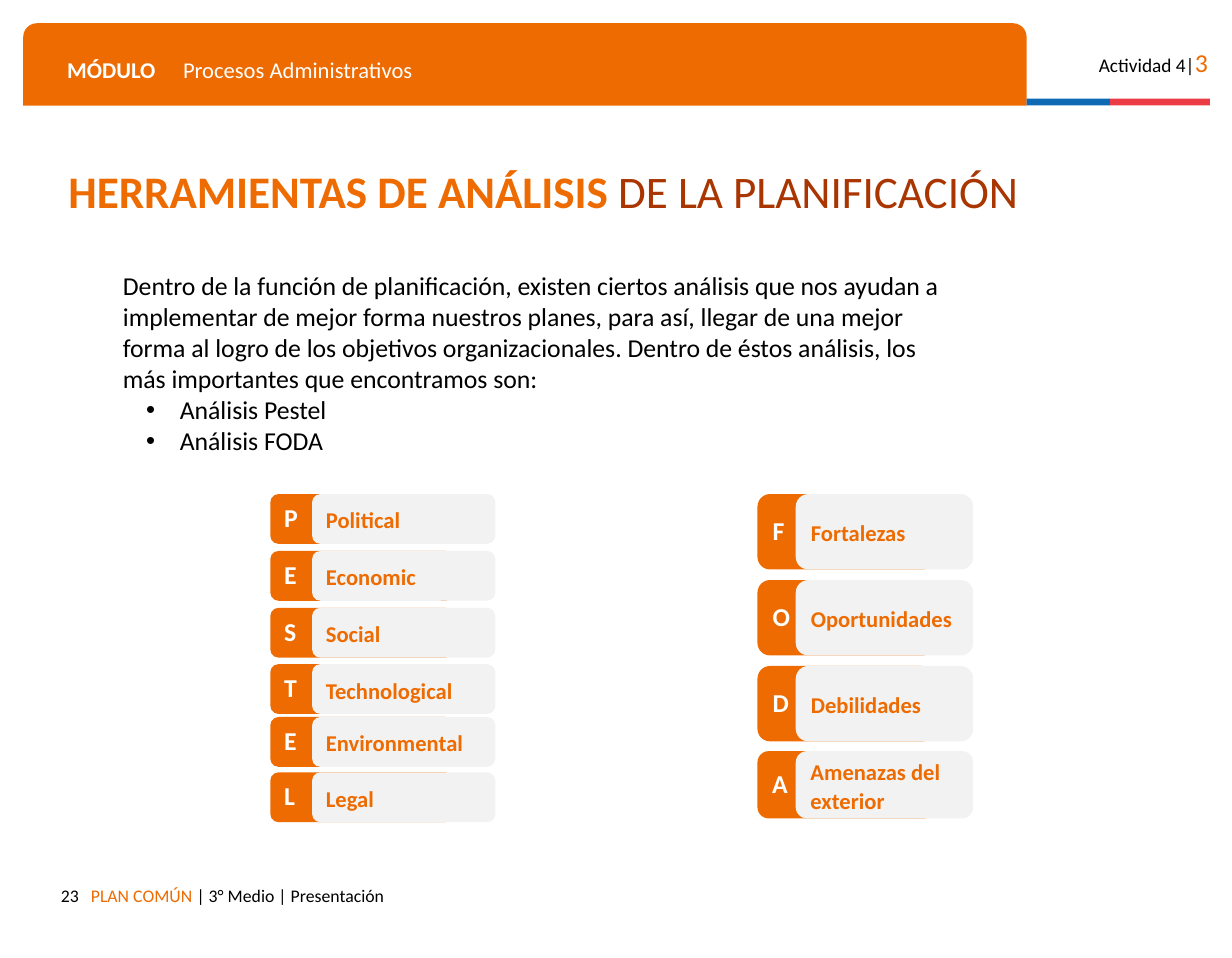
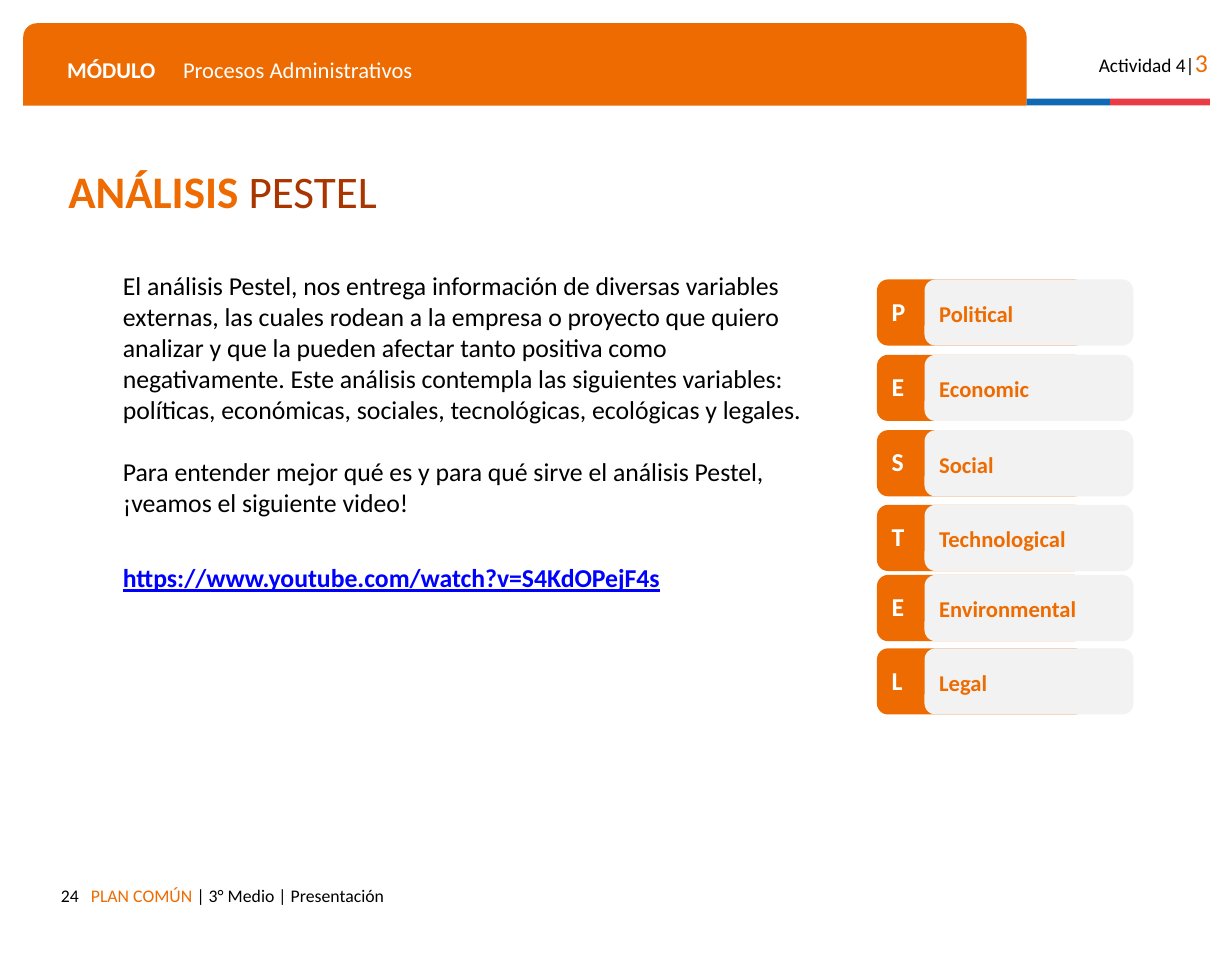
"""Two slides on planning analysis tools: PESTEL and FODA."""
from dataclasses import dataclass
from typing import Optional

from lxml import etree
from pptx import Presentation, util as u
from pptx.dml.color import RGBColor
from pptx.enum import shapes as sh, text as tx
from pptx.oxml import ns

ORANGE = RGBColor(0xED, 0x6B, 0x00)
RUST = RGBColor(0xA9, 0x35, 0x01)
BLUE = RGBColor(0x0F, 0x69, 0xB4)
RED = RGBColor(0xEB, 0x3C, 0x46)
GREY = RGBColor(0xF2, 0xF2, 0xF2)
WHITE = RGBColor(0xFF, 0xFF, 0xFF)
BLACK = RGBColor(0x00, 0x00, 0x00)
LINK = RGBColor(0x00, 0x00, 0xFF)
FONT = "Calibri"
CELL = u.Inches(0.1)
COLS, ROWS = 106.2, 82.6
ROUND = 0.167
STEPS = (0, 1.14, 2.28, 3.41, 4.47, 5.58)
PESTEL = ("Political", "Economic", "Social", "Technological", "Environmental", "Legal")
FODA = ("Fortalezas", "Oportunidades", "Debilidades", "Amenazas del exterior")


@dataclass(frozen=True)
class Box:
    x: float
    y: float
    w: float
    h: float

    def cells(self) -> list[int]:
        return [cell(n) for n in (self.x, self.y, self.w, self.h)]


@dataclass(frozen=True)
class Run:
    words: str
    size: float
    color: RGBColor = BLACK
    bold: bool = False
    line: bool = False


@dataclass(frozen=True)
class Para:
    runs: tuple[Run, ...]
    space: float = 1.0
    before: float = 0
    bullet: bool = False
    tab: Optional[float] = None


@dataclass(frozen=True)
class Stack:
    words: tuple[str, ...]
    box: Box
    shift: float
    last: float


@dataclass(frozen=True)
class Page:
    number: str
    title: tuple[str, str]
    body: Box
    paras: tuple[Para, ...]
    stacks: tuple[Stack, ...]


def cell(count: float) -> int:
    return round(count * CELL)


def write(frame, paras: tuple[Para, ...], *, align=tx.PP_ALIGN.LEFT,
          anchor=tx.MSO_ANCHOR.TOP, inset: float = 1, pad: Optional[float] = None) -> None:
    frame.word_wrap = True
    frame.auto_size = tx.MSO_AUTO_SIZE.NONE
    frame.vertical_anchor = anchor
    frame.margin_left = frame.margin_right = cell(inset)
    frame.margin_top = frame.margin_bottom = cell(inset if pad is None else pad)
    for i, para in enumerate(paras):
        p = frame.paragraphs[0] if i == 0 else frame.add_paragraph()
        prop = p._p.get_or_add_pPr()
        prop.set("marL", str(cell(4.9 if para.bullet else 0)))
        prop.set("indent", str(cell(-2.9 if para.bullet else 0)))
        if para.bullet:
            etree.SubElement(prop, ns.qn("a:buChar")).set("char", "•")
        else:
            etree.SubElement(prop, ns.qn("a:buNone"))
        if para.tab is not None:
            tabs = etree.SubElement(prop, ns.qn("a:tabLst"))
            stop = etree.SubElement(tabs, ns.qn("a:tab"))
            stop.set("pos", str(cell(para.tab)))
            stop.set("algn", "l")
        p.alignment = align
        p.line_spacing = para.space
        p.space_before = u.Pt(para.before)
        for run in para.runs:
            r = p.add_run()
            r.text = run.words
            r.font.name = FONT
            r.font.size = u.Pt(run.size)
            r.font.bold = run.bold
            r.font.underline = run.line
            r.font.color.rgb = run.color


def label(slide, box: Box, *runs: Run, tab: Optional[float] = None, **style) -> None:
    area = slide.shapes.add_textbox(*box.cells())
    write(area.text_frame, (Para(runs, tab=tab),), **style)


def block(slide, kind, box: Box, color: RGBColor):
    item = slide.shapes.add_shape(kind, *box.cells())
    item.shadow.inherit = False
    item.fill.solid()
    item.fill.fore_color.rgb = color
    item.line.fill.background()
    return item


def tile(slide, box: Box, color: RGBColor, run: Run, space: float) -> None:
    item = block(slide, sh.MSO_SHAPE.ROUNDED_RECTANGLE, box, color)
    item.adjustments[0] = ROUND
    write(item.text_frame, (Para((run,), space),),
          anchor=tx.MSO_ANCHOR.MIDDLE, pad=0)


def stack(slide, data: Stack) -> None:
    base = data.box
    end = len(data.words) - 1
    for i, (word, step) in enumerate(zip(data.words, STEPS)):
        top = base.y + step * base.h
        high = data.last if i == end else base.h
        tile(slide, Box(base.x, top, base.w, high), ORANGE,
             Run(word[0], 16, WHITE, True), 0.94)
        tile(slide, Box(base.x + data.shift, top, base.w, high), GREY,
             Run(word, 14, ORANGE, True), 1.07)


def frame(slide, number: str) -> None:
    band = block(slide, sh.MSO_SHAPE.ROUND_2_SAME_RECTANGLE, Box(2, 2, 86.5, 7.1), ORANGE)
    band.adjustments[0] = ROUND
    for x, wide, color in ((88.5, 7.2, BLUE), (95.7, 8.6, RED)):
        block(slide, sh.MSO_SHAPE.RECTANGLE, Box(x, 8.5, wide, 0.6), color)
    label(slide, Box(4.8, 3.8, 81.4, 4.1), Run("MÓDULO", 14, WHITE, True),
          Run("\tProcesos Administrativos", 14, WHITE), tab=8.55)
    label(slide, Box(92.3, 3, 12.8, 4.3), Run("Actividad 4|", 12),
          Run("3", 16, ORANGE), align=tx.PP_ALIGN.RIGHT)
    label(slide, Box(6.85, 75.3, 67.4, 3.5), Run("PLAN COMÚN ", 11, ORANGE),
          Run("| 3° Medio | Presentación", 11))
    label(slide, Box(4.1, 75.3, 3.7, 3.5), Run(number, 11), align=tx.PP_ALIGN.RIGHT)


def place(holder, box: Box) -> None:
    holder.left, holder.top, holder.width, holder.height = box.cells()


def build(deck, page: Page) -> None:
    slide = deck.slides.add_slide(deck.slide_layouts[1])
    frame(slide, page.number)
    title, body = slide.shapes.title, slide.placeholders[1]
    place(title, Box(4.9, 13.9, 92.8, 5.9))
    strong, plain = page.title
    write(title.text_frame,
          (Para((Run(strong, 28, ORANGE, True), Run(plain, 28, RUST)), 0.8),),
          anchor=tx.MSO_ANCHOR.MIDDLE)
    place(body, page.body)
    write(body.text_frame, page.paras, inset=0.5)
    for data in page.stacks:
        stack(slide, data)


PAGES = (
    Page(
        "23", ("HERRAMIENTAS DE ANÁLISIS ", "DE LA PLANIFICACIÓN"),
        Box(10.1, 22.8, 72.4, 17.2),
        (
            Para((Run("Dentro de la función de planificación, existen ciertos análisis "
                      "que nos ayudan a implementar de mejor forma nuestros planes, para "
                      "así, llegar de una mejor forma al logro de los objetivos "
                      "organizacionales. Dentro de éstos análisis, los más importantes "
                      "que encontramos son:", 16),)),
            Para((Run("Análisis Pestel", 16),), bullet=True),
            Para((Run("Análisis FODA", 16),), bullet=True),
        ),
        (
            Stack(PESTEL, Box(23.3, 42.6, 15.8, 4.3), 3.6, 4.3),
            Stack(FODA, Box(65.3, 42.6, 15.3, 6.5), 3.3, 5.8),
        ),
    ),
    Page(
        "24", ("ANÁLISIS ", "PESTEL"),
        Box(10.1, 22.8, 61, 32.2),
        (
            Para((Run("El análisis Pestel, nos entrega información de diversas variables "
                      "externas, las cuales rodean a la empresa o proyecto que quiero "
                      "analizar y que la pueden afectar tanto positiva como "
                      "negativamente. Este análisis contempla las siguientes variables: "
                      "políticas, económicas, sociales, tecnológicas, ecológicas y "
                      "legales.", 16),)),
            Para((Run("Para entender mejor qué es y para qué sirve el análisis Pestel, "
                      "¡veamos el siguiente video!", 16),), before=19.5),
            Para((Run("https://www.youtube.com/watch?v=S4KdOPejF4s", 16, LINK, True, True),),
                 0.9, 29.5),
        ),
        (Stack(PESTEL, Box(75.6, 24.1, 18, 5.7), 4.1, 5.7),),
    ),
)


def main() -> None:
    deck = Presentation()
    deck.slide_width, deck.slide_height = cell(COLS), cell(ROWS)
    for page in PAGES:
        build(deck, page)
    deck.save("out.pptx")


if __name__ == "__main__":
    main()
